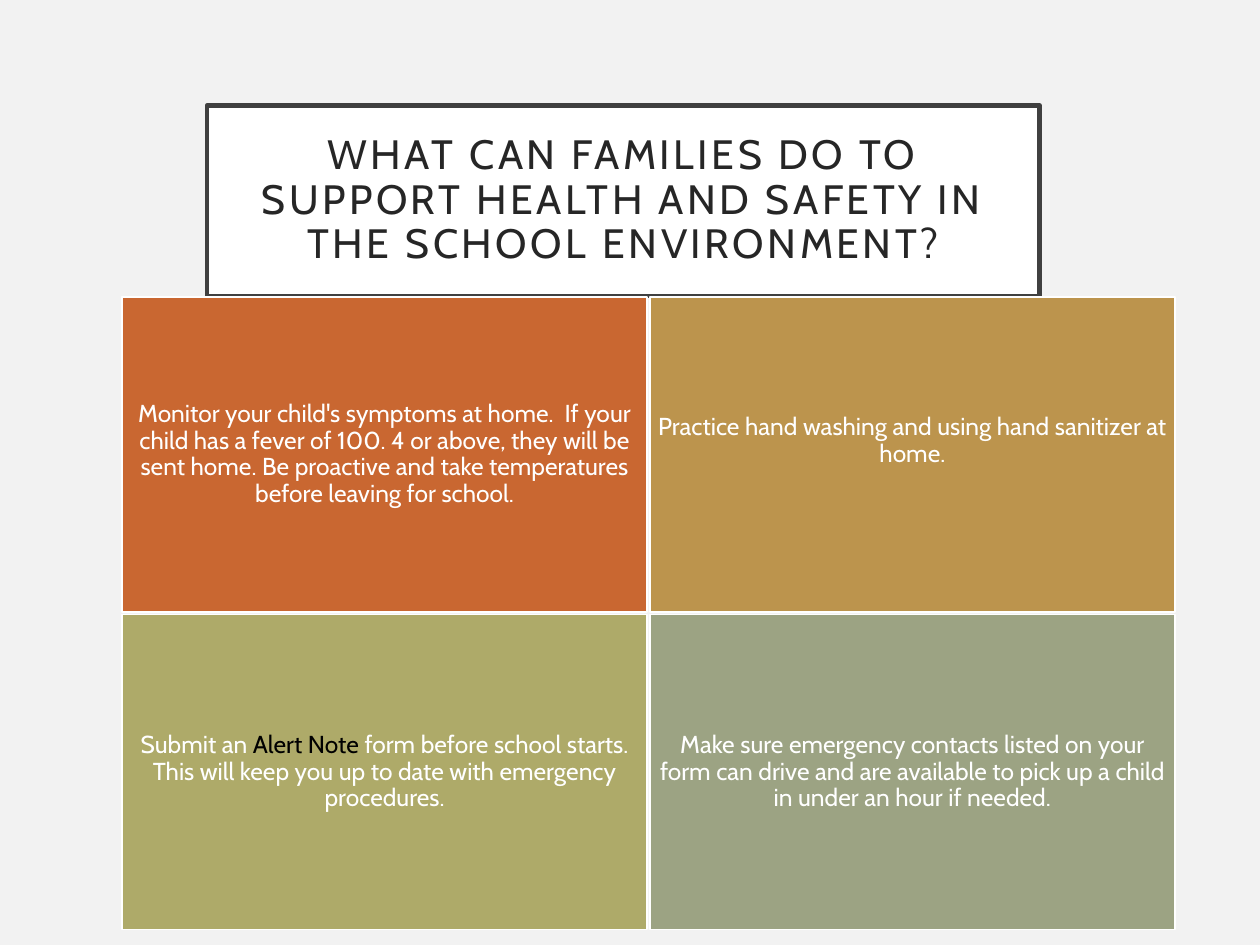
from pptx import Presentation
from pptx.dml.color import RGBColor
from pptx.enum import shapes, text
from pptx.util import Cm, Pt

COLORS = {
    "background": "F2F2F2",
    "white": "FFFFFF",
    "black": "000000",
    "border": "404040",
    "title": "262626",
    "orange": "C96731",
    "gold": "BC944D",
    "olive": "AEAA69",
    "sage": "9CA383",
}
FONT = "Cabin"
TILES = [
    ("orange", [("Monitor your child's symptoms at home.  If your child has a fever "
                 "of 100. 4 or above, they will be sent home. Be proactive and take "
                 "temperatures before leaving for school.", "white")], 0.15),
    ("gold", [("Practice hand washing and using hand sanitizer at home.", "white")], 0.69),
    ("olive", [("Submit an ", "white"),
               ("Alert Note ", "black"),
               ("form before school starts. This will keep you up to date with "
                "emergency procedures.", "white")], 0.15),
    ("sage", [("Make sure emergency contacts listed on your form can drive and are "
               "available to pick up a child in under an hour if needed.", "white")], 0.15),
]


def rgb(name):
    return RGBColor.from_string(COLORS[name])


def add_panel(s, box, fill, line, line_width, inset, runs, size):
    sp = s.shapes.add_shape(shapes.MSO_SHAPE.RECTANGLE, *(Cm(v) for v in box))
    sp.shadow.inherit = False
    sp.fill.solid()
    sp.fill.fore_color.rgb = rgb(fill)
    sp.line.color.rgb = rgb(line)
    sp.line.width = Pt(line_width)
    tf = sp.text_frame
    tf.word_wrap = True
    tf.vertical_anchor = text.MSO_ANCHOR.MIDDLE
    tf.margin_left = tf.margin_right = tf.margin_top = tf.margin_bottom = Cm(inset)
    p = tf.paragraphs[0]
    p.alignment = text.PP_ALIGN.CENTER
    p.line_spacing = 0.9
    p.font.name = FONT
    p.font.size = Pt(size)
    for words, color in runs:
        r = p.add_run()
        r.text = words
        r.font.color.rgb = rgb(color)
    return sp


def add_title(s, box):
    words = "WHAT CAN FAMILIES DO TO SUPPORT HEALTH AND SAFETY IN THE SCHOOL ENVIRONMENT?"
    sp = add_panel(s, box, "white", "border", 2.5, 0.51, [(words, "title")], 23.4)
    r = sp.text_frame.paragraphs[0].runs[0]
    r.font._element.set("spc", "200")


def add_tiles(s, box, gap=0.05, columns=2):
    left, top, width, height = box
    tile_w = (width - gap) / columns
    tile_h = (height - gap) / (len(TILES) // columns)
    for i, (fill, runs, bottom) in enumerate(TILES):
        row, col = divmod(i, columns)
        tile = (left + col * (tile_w + gap), top + row * (tile_h + gap), tile_w, tile_h)
        sp = add_panel(s, tile, fill, "white", 1, 0.15, runs, 14)
        sp.text_frame.margin_bottom = Cm(bottom)


def main():
    prs = Presentation()
    prs.slide_width, prs.slide_height = Cm(25.4), Cm(19.05)
    s = prs.slides.add_slide(prs.slide_layouts[6])
    s.background.fill.solid()
    s.background.fill.fore_color.rgb = rgb("background")
    add_title(s, (4.17, 2.13, 16.79, 3.84))
    add_tiles(s, (2.46, 5.99, 21.23, 12.75))
    prs.save("out.pptx")


if __name__ == "__main__":
    main()
